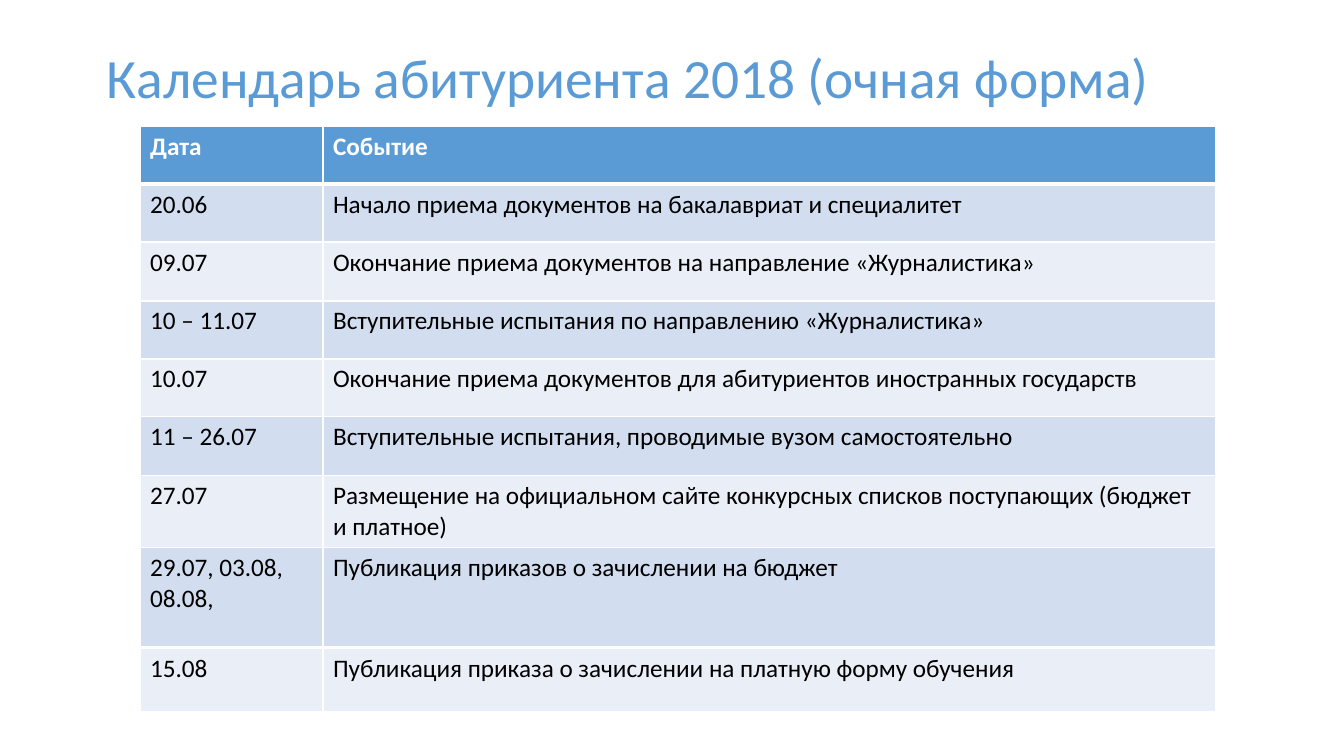
from lxml import etree
from pptx import Presentation
from pptx.dml.color import RGBColor
from pptx.enum.text import MSO_ANCHOR
from pptx.oxml.ns import qn
from pptx.util import Pt

SCALE = 914400 / 100.8
MIDDLE = MSO_ANCHOR.MIDDLE
FONT = "Calibri"
COLORS = {
    "accent": "5B9BD5",
    "band_dark": "D2DEEF",
    "band_light": "EAEFF7",
    "white": "FFFFFF",
    "text": "000000",
}
TABLE_LEFT = 140
COLUMN_WIDTHS = (183, 893)
HEADER = ("Дата", "Событие")
EVENTS = [
    ("20.06", "Начало приема документов на бакалавриат и специалитет"),
    ("09.07", "Окончание приема документов на направление «Журналистика»"),
    ("10 – 11.07", "Вступительные испытания по направлению «Журналистика»"),
    ("10.07", "Окончание приема документов для абитуриентов иностранных государств"),
    ("11 – 26.07", "Вступительные испытания, проводимые вузом самостоятельно"),
    ("27.07", "Размещение на официальном сайте конкурсных списков поступающих (бюджет и платное)"),
    ("29.07, 03.08, 08.08,", "Публикация приказов о зачислении на бюджет"),
]
FINAL_EVENT = ("15.08", "Публикация приказа о зачислении на платную форму обучения")
ROW_HEIGHTS = (58, 58, 59, 58, 58, 59, 72, 99)


def px(value):
    return round(value * SCALE)


def rgb(name):
    return RGBColor.from_string(COLORS[name])


def add_run(p, text, size, color, bold=False):
    r = p.add_run()
    r.text = text
    r.font.name = FONT
    r.font.size = Pt(size)
    r.font.bold = bold
    r.font.color.rgb = rgb(color)


def add_title(slide, text):
    sp = slide.shapes.add_textbox(px(97), px(36), px(1142), px(90))
    tf = sp.text_frame
    tf.word_wrap = True
    tf.vertical_anchor = MIDDLE
    p = tf.paragraphs[0]
    p.line_spacing = 0.9
    add_run(p, text, 39.6, "accent")


def set_borders(cell, bottom):
    tc_pr = cell._tc.get_or_add_tcPr()
    for side, width in (("L", 1), ("R", 1), ("T", 1), ("B", bottom)):
        ln = etree.SubElement(tc_pr, qn(f"a:ln{side}"), w=str(Pt(width)))
        fill = etree.SubElement(ln, qn("a:solidFill"))
        etree.SubElement(fill, qn("a:srgbClr"), val=COLORS["white"])


def fill_row(table, index, texts, fill, color="text", bold=False, bottom=1):
    for column, text in enumerate(texts):
        cell = table.cell(index, column)
        set_borders(cell, bottom)
        cell.fill.solid()
        cell.fill.fore_color.rgb = rgb(fill)
        add_run(cell.text_frame.paragraphs[0], text, 18, color, bold)


def add_calendar_table(slide, top, heights):
    frame = slide.shapes.add_table(
        len(heights), len(COLUMN_WIDTHS), px(TABLE_LEFT), px(top),
        px(sum(COLUMN_WIDTHS)), px(sum(heights)))
    table = frame.table
    table.first_row = False
    table.horz_banding = False
    for column, width in zip(table.columns, COLUMN_WIDTHS):
        column.width = px(width)
    for row, height in zip(table.rows, heights):
        row.height = px(height)
    return table


def main():
    prs = Presentation()
    prs.slide_width = px(1344)
    prs.slide_height = px(756)
    slide = prs.slides.add_slide(prs.slide_layouts[6])

    add_title(slide, "Календарь абитуриента 2018 (очная форма)")

    calendar = add_calendar_table(slide, 126, ROW_HEIGHTS)
    fill_row(calendar, 0, HEADER, "accent", "white", bold=True, bottom=3)
    for index, event in enumerate(EVENTS, 1):
        fill_row(calendar, index, event, "band_dark" if index % 2 else "band_light")

    final = add_calendar_table(slide, 648, (65,))
    fill_row(final, 0, FINAL_EVENT, "band_light", bottom=3)

    prs.save("out.pptx")


if __name__ == "__main__":
    main()
